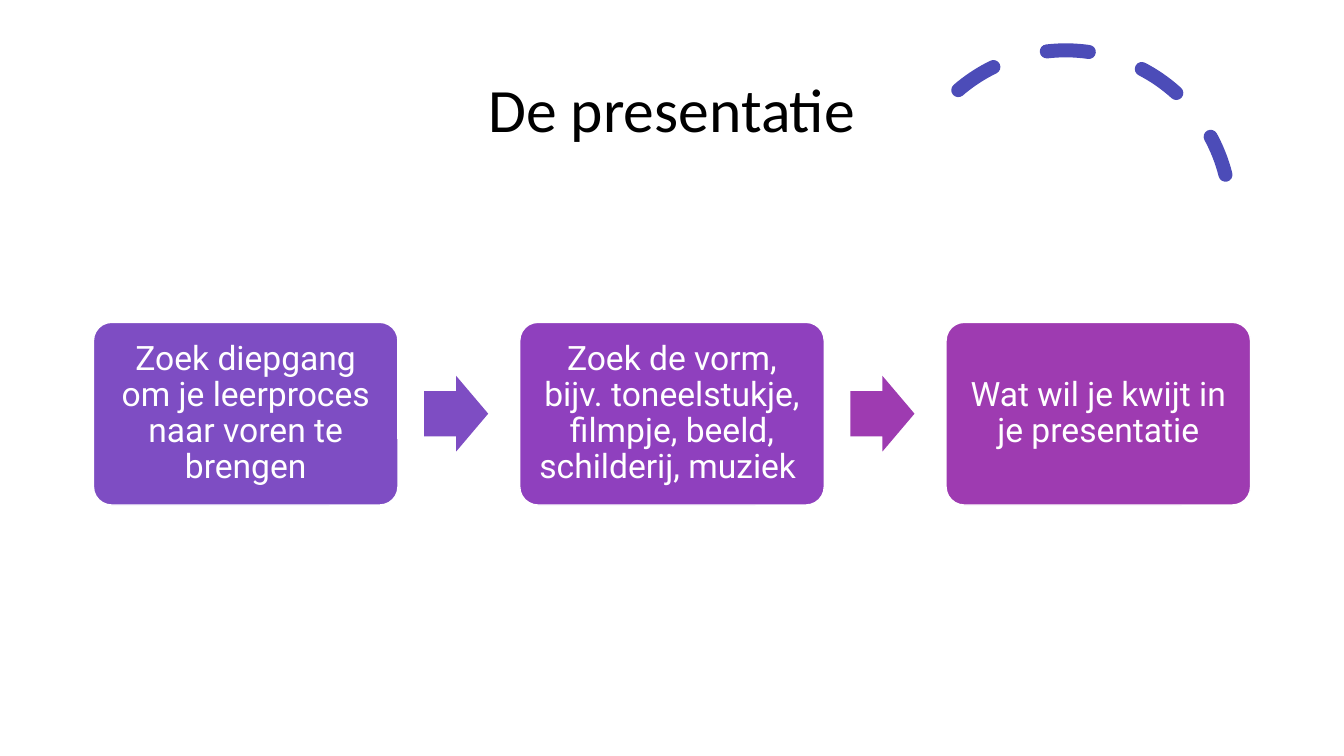
from pptx import Presentation
from pptx.dml.color import RGBColor
from pptx.enum.dml import MSO_LINE
from pptx.enum.shapes import MSO_SHAPE
from pptx.enum.text import MSO_ANCHOR, MSO_AUTO_SIZE, PP_ALIGN
from pptx.util import Pt

ROUNDED, ARROW, ARC = MSO_SHAPE.ROUNDED_RECTANGLE, MSO_SHAPE.RIGHT_ARROW, MSO_SHAPE.ARC
DASH = MSO_LINE.DASH
MIDDLE = MSO_ANCHOR.MIDDLE
CENTER = PP_ALIGN.CENTER
NO_FIT = MSO_AUTO_SIZE.NONE

EMU_PER_PX = 9525
COLORS = {
    "white": "FFFFFF",
    "black": "000000",
    "indigo": "4C4CB8",
    "violet": "7E4DC3",
    "purple": "8F40BE",
    "magenta": "9E3BB1",
}
STEPS = [
    ("Zoek diepgang om je leerproces naar voren te brengen", "violet"),
    ("Zoek de vorm, bijv. toneelstukje, filmpje, beeld, schilderij, muziek ", "purple"),
    ("Wat wil je kwijt in je presentatie", "magenta"),
]
ARROW_COLORS = ["violet", "magenta"]
STEP_LEFT, STEP_PITCH, STEP_TOP = 89, 406, 307
STEP_WIDTH, STEP_HEIGHT = 290, 174
ARROW_OFFSET, ARROW_WIDTH, ARROW_HEIGHT = 315, 61, 72


def px(count):
    return count * EMU_PER_PX


def rgb(name):
    return RGBColor.from_string(COLORS[name])


def set_text(shape, text, font, size, color):
    """Write one centred paragraph into a shape."""
    frame = shape.text_frame
    frame.word_wrap = True
    frame.auto_size = NO_FIT
    frame.vertical_anchor = MIDDLE
    para = frame.paragraphs[0]
    para.text = text
    para.alignment = CENTER
    para.line_spacing = 0.9
    para.font.name = font
    para.font.size = Pt(size)
    para.font.color.rgb = rgb(color)


def add_preset(slide, kind, left, top, width, height, adjustments):
    shape = slide.shapes.add_shape(kind, px(left), px(top), px(width), px(height))
    shape.shadow.inherit = False
    for index, value in enumerate(adjustments):
        shape.adjustments[index] = value
    return shape


def fill_with(shape, color):
    shape.fill.solid()
    shape.fill.fore_color.rgb = rgb(color)


def set_title(slide, text):
    title = slide.shapes.title
    title.left, title.top, title.width, title.height = px(88), px(38), px(1104), px(139)
    set_text(title, text, "Calibri", 44, "black")


def add_dashed_arc(slide):
    arc = add_preset(slide, ARC, 858, 48, 314, 314, [146.13, 0])
    arc.rotation = 345.8
    arc.fill.background()
    arc.line.color.rgb = rgb("indigo")
    arc.line.width = Pt(10)
    arc.line.dash_style = DASH
    arc.line._get_or_add_ln().set("cap", "rnd")


def add_step(slide, left, text, color):
    box = add_preset(slide, ROUNDED, left, STEP_TOP, STEP_WIDTH, STEP_HEIGHT, [0.1])
    fill_with(box, color)
    box.line.color.rgb = rgb("white")
    box.line.width = Pt(1)
    frame = box.text_frame
    frame.margin_left = frame.margin_right = px(10)
    frame.margin_top = frame.margin_bottom = px(10)
    set_text(box, text, "Roboto", 24, "white")


def add_step_arrow(slide, left, color):
    top = STEP_TOP + (STEP_HEIGHT - ARROW_HEIGHT) // 2
    arrow = add_preset(slide, ARROW, left, top, ARROW_WIDTH, ARROW_HEIGHT, [0.6, 0.5])
    fill_with(arrow, color)
    arrow.line.fill.background()


def main():
    deck = Presentation()
    deck.slide_width, deck.slide_height = px(1280), px(720)
    slide = deck.slides.add_slide(deck.slide_layouts.get_by_name("Title Only"))
    slide.background.fill.solid()
    slide.background.fill.fore_color.rgb = rgb("white")
    set_title(slide, "De presentatie")
    add_dashed_arc(slide)
    for index, (text, color) in enumerate(STEPS):
        add_step(slide, STEP_LEFT + index * STEP_PITCH, text, color)
    for index, color in enumerate(ARROW_COLORS):
        add_step_arrow(slide, STEP_LEFT + ARROW_OFFSET + index * STEP_PITCH, color)
    deck.save("out.pptx")


if __name__ == "__main__":
    main()
